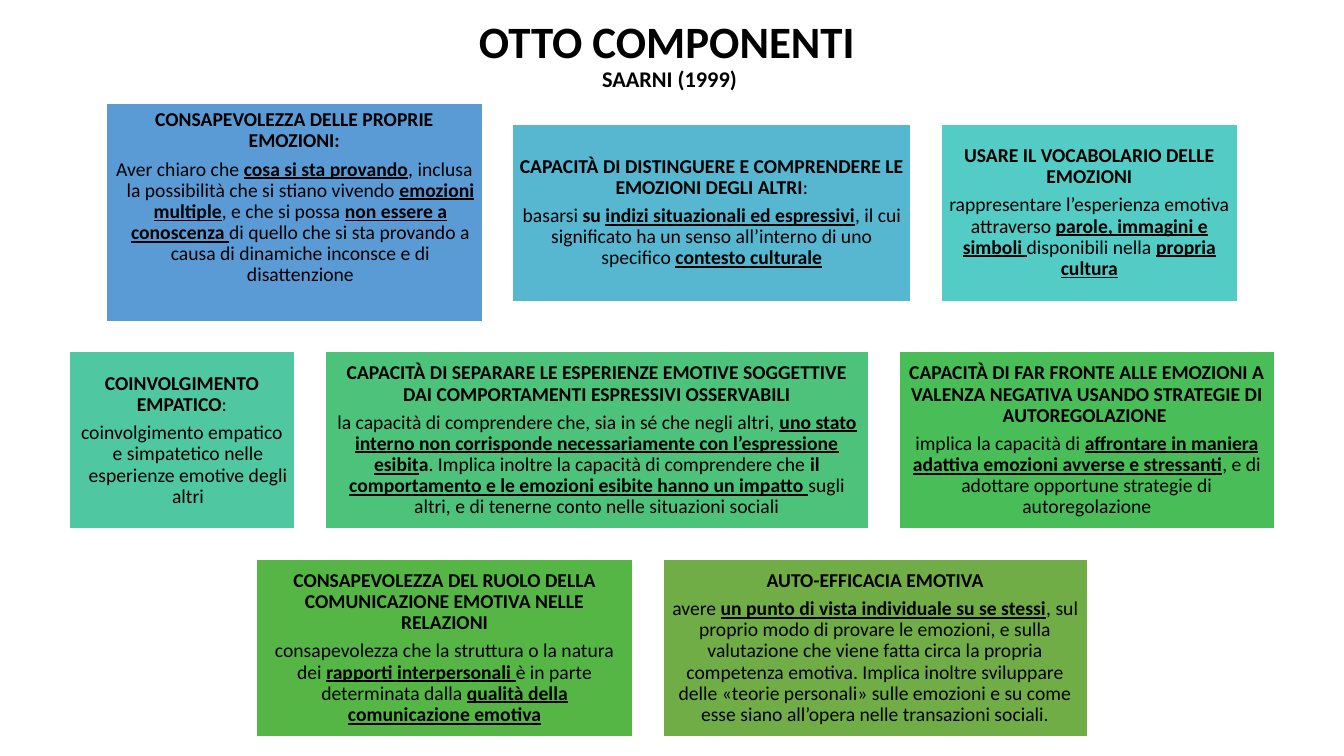
from pptx import Presentation, util as u
from pptx.dml.color import RGBColor
from pptx.enum import shapes, text

PAGE_WIDTH, PAGE_HEIGHT = 13.33, 7.5
GAP = 0.3
CARD_HEIGHT = 1.76
ROWS_TOP = 1.03
INSET = 0.06
HANGING = 0.12

# Spans are parted by "|"; a leading "*" means bold, "_" bold and underlined.
ROWS = [
    [
        dict(width=3.73, height=2.16, fill="5B9BD5", anchor="TOP", hanging=True,
             heading="*CONSAPEVOLEZZA DELLE PROPRIE EMOZIONI:",
             body="Aver chiaro che |_cosa si sta provando|, inclusa la possibilità che si "
                  "stiano vivendo |_emozioni multiple|, e che si possa |_non essere a "
                  "conoscenza |di quello che si sta provando a causa di dinamiche "
                  "inconsce e di disattenzione"),
        dict(width=3.95, fill="57B7D1",
             heading="*CAPACITÀ DI DISTINGUERE E COMPRENDERE LE EMOZIONI DEGLI ALTRI|:",
             body="basarsi |*su |_indizi situazionali ed espressivi|, il cui significato "
                  "ha un senso all’interno di uno specifico |_contesto culturale"),
        dict(width=2.94, fill="53CCC5",
             heading="*USARE IL VOCABOLARIO DELLE EMOZIONI",
             body="rappresentare l’esperienza emotiva attraverso |_parole, immagini e "
                  "simboli |disponibili nella |_propria cultura"),
    ],
    [
        dict(width=2.24, fill="4FC7A0", hanging=True,
             heading="*COINVOLGIMENTO EMPATICO|:",
             body="coinvolgimento empatico e simpatetico nelle esperienze emotive "
                  "degli altri"),
        dict(width=5.39, fill="4CC27B",
             heading="*CAPACITÀ DI SEPARARE LE ESPERIENZE EMOTIVE SOGGETTIVE DAI "
                     "COMPORTAMENTI ESPRESSIVI OSSERVABILI",
             body="la capacità di comprendere che, sia in sé che negli altri, |_uno stato "
                  "interno non corrisponde necessariamente con l’espressione esibit|*a|. "
                  "Implica inoltre la capacità di comprendere che |*il |_comportamento e "
                  "le emozioni esibite hanno un impatto |sugli altri, e di tenerne conto "
                  "nelle situazioni sociali"),
        dict(width=3.73, fill="48BD58",
             heading="*CAPACITÀ DI FAR FRONTE ALLE EMOZIONI A VALENZA NEGATIVA USANDO "
                     "STRATEGIE DI AUTOREGOLAZIONE ",
             body="implica la capacità di |_affrontare in maniera adattiva emozioni "
                  "avverse e stressanti|, e di adottare opportune strategie di "
                  "autoregolazione"),
    ],
    [
        dict(width=3.73, fill="55B646",
             heading="*CONSAPEVOLEZZA DEL RUOLO DELLA COMUNICAZIONE EMOTIVA NELLE RELAZIONI",
             body="consapevolezza che la struttura o la natura dei |_rapporti "
                  "interpersonali |è in parte determinata dalla |_qualità della "
                  "comunicazione emotiva"),
        dict(width=4.21, fill="70AD47",
             heading="*AUTO-EFFICACIA EMOTIVA",
             body="avere |_un punto di vista individuale su se stessi|, sul proprio modo "
                  "di provare le emozioni, e sulla valutazione che viene fatta circa la "
                  "propria competenza emotiva. Implica inoltre sviluppare delle «teorie "
                  "personali» sulle emozioni e su come esse siano all’opera nelle "
                  "transazioni sociali."),
    ],
]


def color(value):
    """Turn a hex string into a colour."""
    return RGBColor.from_string(value)


def write(para, marked, size, space_after=0):
    """Fill a centred paragraph with the spans of a marked string."""
    para.alignment = text.PP_ALIGN.CENTER
    para.line_spacing = 0.9
    para.space_before = u.Pt(0)
    para.space_after = u.Pt(space_after)
    for part in marked.split("|"):
        span = para.add_run()
        span.text = part.lstrip("*_")
        span.font.name = "Calibri"
        span.font.size = u.Pt(size)
        span.font.bold = part[0] in "*_"
        span.font.underline = part[0] == "_"
        span.font.color.rgb = color("000000")


def add_title(page, left, top, width, height):
    """Place the title and its source line in the given box."""
    box = page.shapes.add_textbox(*map(u.Inches, (left, top, width, height)))
    frame = box.text_frame
    frame.word_wrap = True
    write(frame.paragraphs[0], "*OTTO COMPONENTI ", 32)
    write(frame.add_paragraph(), "*SAARNI (1999) ", 16)


def add_card(page, card, left, top, width, height):
    """Draw one component as a coloured card in the given box."""
    box = page.shapes.add_shape(shapes.MSO_SHAPE.RECTANGLE,
                                *map(u.Inches, (left, top, width, height)))
    box.shadow.inherit = False
    box.fill.solid()
    box.fill.fore_color.rgb = color(card["fill"])
    box.line.color.rgb = color("FFFFFF")
    box.line.width = u.Pt(1)
    frame = box.text_frame
    frame.word_wrap = True
    frame.vertical_anchor = text.MSO_ANCHOR[card.get("anchor", "MIDDLE")]
    frame.margin_left = frame.margin_right = u.Inches(INSET)
    frame.margin_top = frame.margin_bottom = u.Inches(INSET)
    write(frame.paragraphs[0], card["heading"], 14, 4.9)
    body = frame.add_paragraph()
    hanging = card.get("hanging", False)
    write(body, card["body"], 14, 2.1 if hanging else 4.9)
    if hanging:
        body.level = 1
        properties = body._p.get_or_add_pPr()
        properties.set("marL", str(u.Inches(HANGING)))
        properties.set("indent", str(-u.Inches(HANGING)))


def add_row(page, cards, top, height):
    """Centre a row of cards on the page, with equal gaps."""
    row_width = sum(card["width"] for card in cards) + GAP * (len(cards) - 1)
    left = (PAGE_WIDTH - row_width) / 2
    for card in cards:
        card_height = card.get("height", CARD_HEIGHT)
        add_card(page, card, left, top + (height - card_height) / 2,
                 card["width"], card_height)
        left += card["width"] + GAP


def main():
    """Build the slide and save it."""
    deck = Presentation()
    deck.slide_width = u.Inches(PAGE_WIDTH)
    deck.slide_height = u.Inches(PAGE_HEIGHT)
    page = deck.slides.add_slide(deck.slide_layouts[6])
    add_title(page, 2.57, 0.15, 8.19, 1.45)
    top = ROWS_TOP
    for cards in ROWS:
        height = max(card.get("height", CARD_HEIGHT) for card in cards)
        add_row(page, cards, top, height)
        top += height + GAP
    deck.save("out.pptx")


if __name__ == "__main__":
    main()
